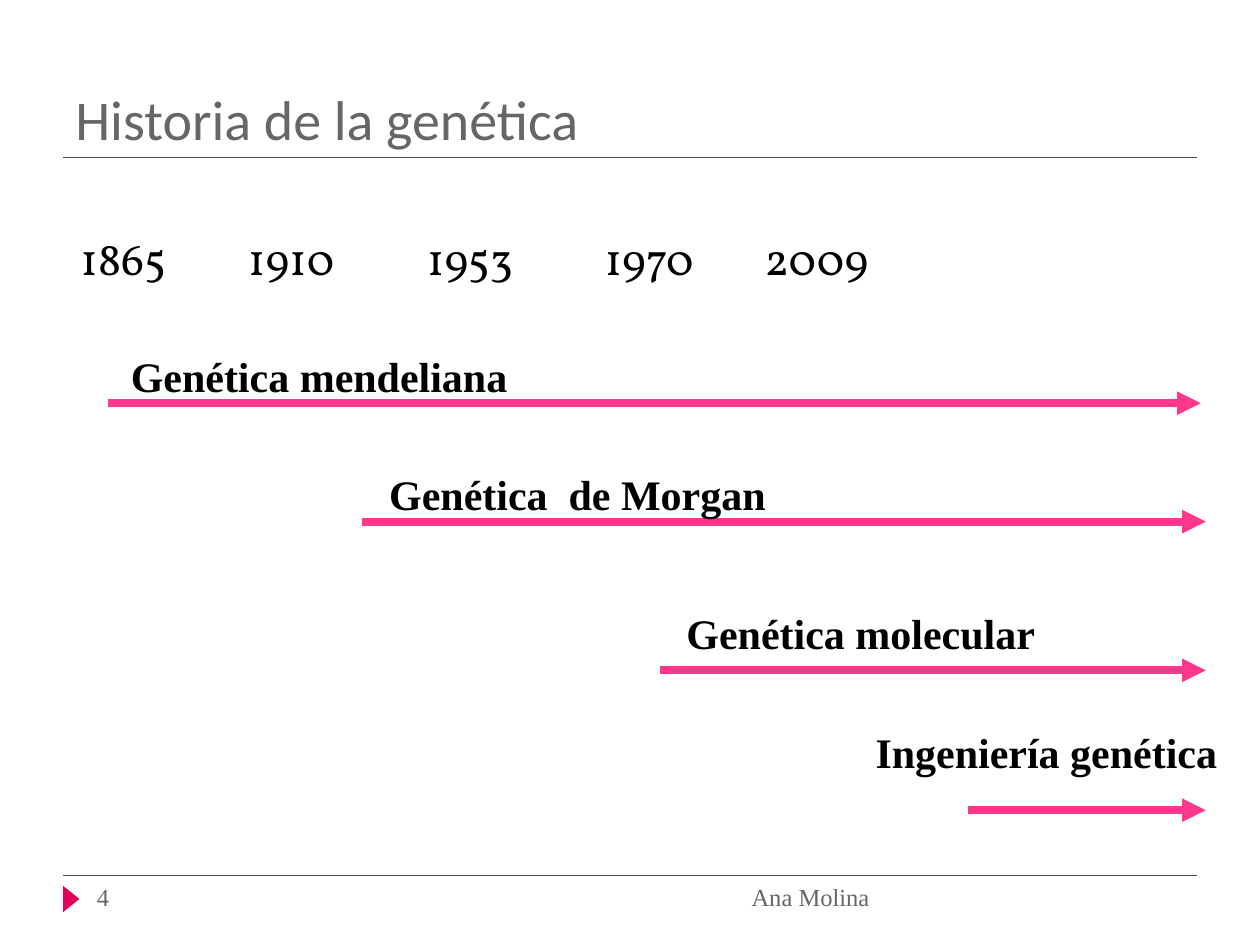
import pptx
import pptx.util
import pptx.dml.color
import pptx.enum.shapes
import pptx.enum.text
import pptx.oxml.ns
from lxml import etree

Inches = pptx.util.Inches
ALIGN = pptx.enum.text.PP_ALIGN
ANCHOR = pptx.enum.text.MSO_ANCHOR

TITLE = {"name": "Calibri", "size": 32, "color": "666666"}
YEARS = {"name": "Vollkorn", "size": 26, "color": "000000"}
ERA = {"name": "Times New Roman", "size": 24, "color": "000000", "bold": True}
FOOTER = {"name": "Times New Roman", "size": 14, "color": "666666"}


def paint(target, color):
    target.rgb = pptx.dml.color.RGBColor.from_string(color)


def add_xml(parent, tag, **values):
    child = etree.SubElement(parent, pptx.oxml.ns.qn(tag))
    for name, value in values.items():
        child.set(name, str(value))
    return child


def add_text(page, box, text, style, align=ALIGN.LEFT, anchor=ANCHOR.TOP, tabs=()):
    frame = page.shapes.add_textbox(*map(Inches, box)).text_frame
    frame.word_wrap = True
    frame.vertical_anchor = anchor
    para = frame.paragraphs[0]
    para.alignment = align
    if tabs:
        tab_list = add_xml(para._p.get_or_add_pPr(), "a:tabLst")
        for stop in tabs:
            add_xml(tab_list, "a:tab", pos=Inches(stop), algn="l")
    span = para.add_run()
    span.text = text
    for key, value in style.items():
        if key == "color":
            paint(span.font.color, value)
        else:
            setattr(span.font, key, pptx.util.Pt(value) if key == "size" else value)


def add_line(page, left, right, height, color, weight, arrow=False):
    line = page.shapes.add_connector(
        pptx.enum.shapes.MSO_CONNECTOR.STRAIGHT,
        Inches(left), Inches(height), Inches(right), Inches(height))
    line.line.width = pptx.util.Pt(weight)
    line.line.fill.solid()
    paint(line.line.fill.fore_color, color)
    if arrow:
        add_xml(line.line._get_or_add_ln(), "a:tailEnd", type="triangle")
    add_xml(line._element.spPr, "a:effectLst")


def add_heading(page, box):
    left, top, width, height = box
    add_text(page, box, "Historia de la genética", TITLE, anchor=ANCHOR.BOTTOM)
    add_line(page, left, left + width, top + height, "4D4D4D", 0.75)


def add_years(page, box):
    years = ["1865", "1910", "1953", "1970", "2009"]
    add_text(page, box, "\t".join(years), YEARS, tabs=(1.33, 2.75, 4.16, 5.43))


def add_era(page, box, name, start, end, height):
    add_line(page, start, end, height, "FF388C", 4.5, arrow=True)
    add_text(page, box, name, ERA)


def add_footer(page, box):
    left, top, width, height = box
    add_line(page, left, left + width, top, "4D4D4D", 0.75)
    marker = page.shapes.add_shape(
        pptx.enum.shapes.MSO_SHAPE.ISOSCELES_TRIANGLE,
        Inches(left - 0.04), Inches(top + 0.12), Inches(0.21), Inches(0.13))
    marker.rotation = 90
    marker.shadow.inherit = False
    marker.fill.solid()
    paint(marker.fill.fore_color, "E40059")
    marker.line.fill.background()
    add_text(page, (left + 0.17, top, 2.17, height), "4", FOOTER)
    add_text(page, (left + 2.67, top, 3.83, height), "Ana Molina", FOOTER, ALIGN.RIGHT)


def main():
    deck = pptx.Presentation()
    deck.slide_width, deck.slide_height = Inches(10), Inches(7.5)
    page = deck.slides.add_slide(deck.slide_layouts[6])
    add_heading(page, (0.5, 0.17, 9, 1.08))
    add_years(page, (0.54, 1.78, 9, 0.6))
    eras = [
        ((0.94, 2.73, 3.54, 0.5), "Genética mendeliana", 0.86, 9.53, 3.2),
        ((2.99, 3.67, 5.59, 0.5), "Genética  de Morgan", 2.87, 9.57, 4.14),
        ((5.35, 4.77, 3.07, 0.5), "Genética molecular", 5.24, 9.57, 5.32),
        ((6.85, 5.72, 3.15, 0.5), "Ingeniería genética", 7.68, 9.57, 6.43),
    ]
    for era in eras:
        add_era(page, *era)
    add_footer(page, (0.5, 6.95, 9, 0.4))
    deck.save("out.pptx")


if __name__ == "__main__":
    main()
